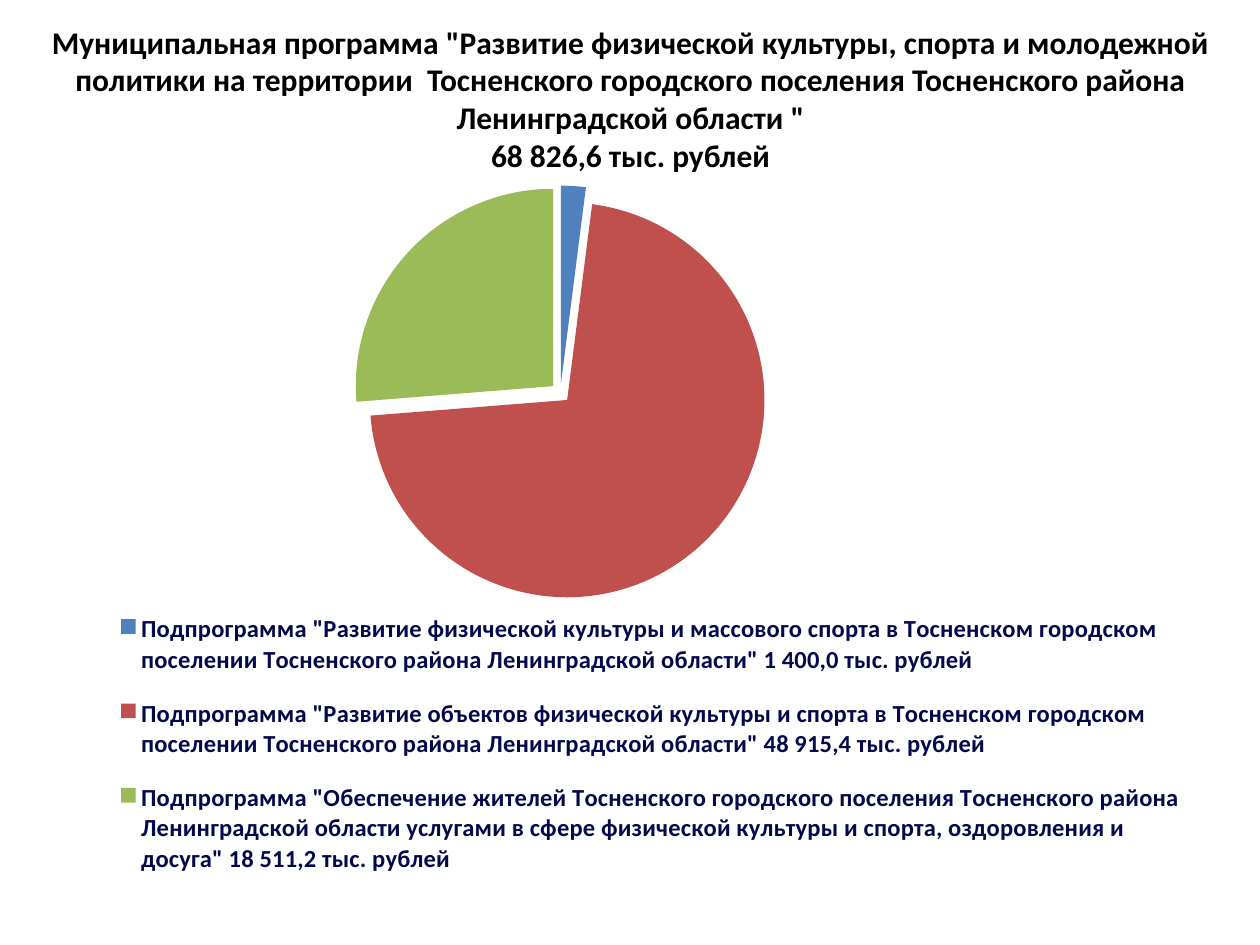
from dataclasses import dataclass
from typing import Any

from lxml import etree
from pptx import Presentation
from pptx.chart.data import CategoryChartData
from pptx.dml.color import RGBColor
from pptx.enum.chart import XL_CHART_TYPE, XL_LEGEND_POSITION
from pptx.enum.text import PP_ALIGN
from pptx.oxml.ns import qn
from pptx.util import Inches, Pt

PIE = XL_CHART_TYPE.PIE_EXPLODED
BOTTOM = XL_LEGEND_POSITION.BOTTOM
CENTER = PP_ALIGN.CENTER

BLACK = RGBColor(0x00, 0x00, 0x00)
NAVY = RGBColor(0x04, 0x09, 0x4C)
BLUE = RGBColor(0x4F, 0x81, 0xBD)
RED = RGBColor(0xC0, 0x50, 0x4D)
GREEN = RGBColor(0x9B, 0xBB, 0x59)

COLUMNS, ROWS = 100, 75

HEADING = [
    'Муниципальная программа "Развитие физической культуры, спорта и молодежной '
    'политики на территории  Тосненского городского поселения Тосненского района '
    'Ленинградской области "',
    "68 826,6 тыс. рублей",
]
SUBPROGRAMMES = [
    ('Подпрограмма "Развитие физической культуры и массового спорта в Тосненском городском '
     'поселении Тосненского района Ленинградской области" 1 400,0 тыс. рублей', 2, BLUE),
    ('Подпрограмма "Развитие объектов физической культуры и спорта в Тосненском городском '
     'поселении Тосненского района Ленинградской области" 48 915,4 тыс. рублей', 71, RED),
    ('Подпрограмма "Обеспечение жителей Тосненского городского поселения Тосненского района '
     'Ленинградской области услугами в сфере физической культуры и спорта, оздоровления и '
     'досуга" 18 511,2 тыс. рублей', 26, GREEN),
]


def set_font(font, color, **values):
    for attribute, value in values.items():
        setattr(font, attribute, value)
    font.color.rgb = color


def set_layout(parent, position, box, inner=False):
    """Place a chart part by hand; box holds x, y, w, h in percent of the chart."""
    for old_layout in parent.findall(qn("c:layout")):
        parent.remove(old_layout)
    layout = etree.Element(qn("c:layout"))
    manual = etree.SubElement(layout, qn("c:manualLayout"))
    settings = {"layoutTarget": "inner"} if inner else {}
    settings |= {"xMode": "edge", "yMode": "edge"}
    settings |= {side: f"{percent / 100:.3f}" for side, percent in zip("xywh", box)}
    for tag, value in settings.items():
        etree.SubElement(manual, qn(f"c:{tag}")).set("val", value)
    parent.insert(position, layout)


@dataclass
class BudgetSlide:
    """Holds the style and the current slide; boxes are in grid columns and rows."""
    slide: Any
    width: int
    height: int
    typeface: str = "Calibri"
    text_size: int = Pt(18)
    legend_size: int = Pt(14)

    def place(self, left, top, width, height):
        column, row = self.width / COLUMNS, self.height / ROWS
        return (round(left * column), round(top * row),
                round(width * column), round(height * row))

    def heading(self, box, lines):
        frame = self.slide.shapes.add_textbox(*self.place(*box)).text_frame
        frame.word_wrap = True
        for number, line in enumerate(lines):
            paragraph = frame.add_paragraph() if number else frame.paragraphs[0]
            paragraph.alignment = CENTER
            run = paragraph.add_run()
            run.text = line
            set_font(run.font, BLACK, name=self.typeface, size=self.text_size, bold=True)

    def pie(self, box, parts, plot_box, legend_box, explosion):
        labels, shares, colors = zip(*parts)
        data = CategoryChartData()
        data.categories = labels
        data.add_series("Series 1", shares)
        chart = self.slide.shapes.add_chart(PIE, *self.place(*box), data).chart
        chart.has_title = False
        set_font(chart.font, BLACK, name=self.typeface, size=self.text_size)

        plot = chart.plots[0]
        plot.vary_by_categories = True
        series = plot.series[0]
        series._element.find(qn("c:explosion")).set("val", str(explosion))
        for number, color in enumerate(colors):
            fill = series.points[number].format.fill
            fill.solid()
            fill.fore_color.rgb = color

        chart.has_legend = True
        legend = chart.legend
        legend.position = BOTTOM
        legend.include_in_layout = False
        set_font(legend.font, NAVY, name=self.typeface, size=self.legend_size, bold=True)
        set_layout(chart._chartSpace.chart.plotArea, 0, plot_box, inner=True)
        set_layout(legend._element, 1, legend_box)


def main():
    deck = Presentation()
    deck.slide_width, deck.slide_height = Inches(10), Inches(7.5)
    blank = deck.slide_layouts[6]
    page = BudgetSlide(deck.slides.add_slide(blank), deck.slide_width, deck.slide_height)
    page.heading((2.8, 1.3, 94.5, 13.1), HEADING)
    page.pie((3.1, 13.9, 96.9, 59.8), SUBPROGRAMMES,
             plot_box=(1.6, 1.4, 82.2, 55),
             legend_box=(6.1, 55.1, 88, 40.8), explosion=5)
    deck.save("out.pptx")


if __name__ == "__main__":
    main()
